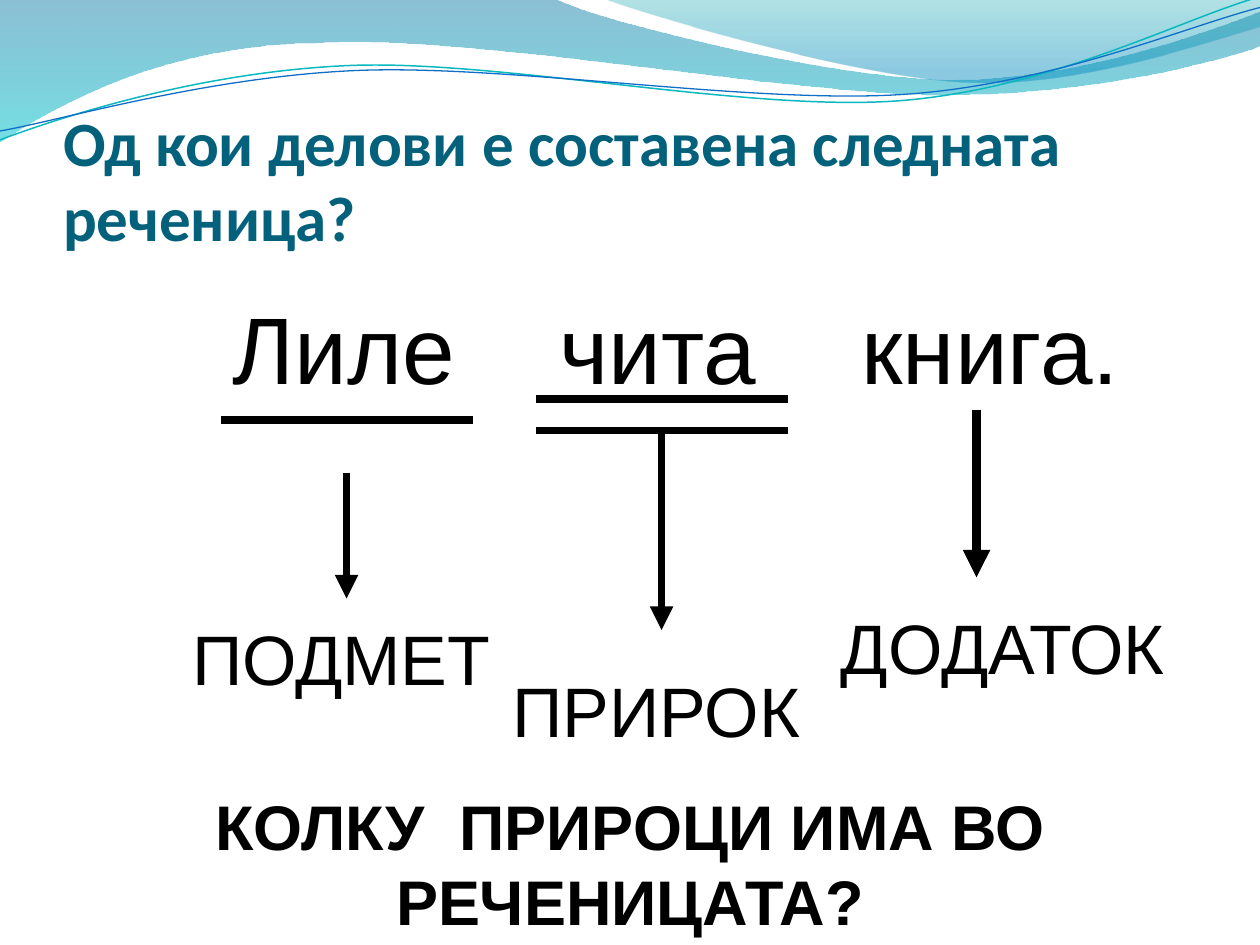
from math import cos, radians, sin

from lxml.etree import SubElement as Sub
from pptx import Presentation
from pptx.dml.color import RGBColor
from pptx.enum.shapes import MSO_CONNECTOR as Conn
from pptx.enum.text import MSO_ANCHOR as Anchor, MSO_AUTO_SIZE as Auto, PP_ALIGN as Align
from pptx.oxml.ns import qn
from pptx.util import Inches, Pt

CELL = Inches(1) // 12
BLACK = "000000"
TILT = 2.7

BANDS = [
    ([(0, -0.01), (4.4, -0.01),
      (4.76, 0.17, 6.64, 0.63, 7.58, 0.63), (8.53, 0.63, 9.58, 0.26, 10, 0.09),
      (10.01, 0.36), (9.83, 0.44, 8.7, 0.76, 7.46, 0.75),
      (6.22, 0.75, 3.82, 0.28, 2.57, 0.34), (1.29, 0.35, 0.46, 0.83, -0.01, 1.13)],
     [(0, "0074A1", 45), (1, "00C6CF", 55)]),
    ([(4.79, -0.01), (5.09, 0.11, 6.82, 0.62, 7.69, 0.65),
      (8.56, 0.69, 9.61, 0.32, 10, 0.21), (10, 0)],
     [(0, "00A1A9", 30), (0.8, "008BBF", 45)]),
]
STRANDS = [
    ([(0, 1.11), (0.48, 0.93, 1.58, 0.57, 2.77, 0.52),
      (3.95, 0.47, 5.93, 0.89, 7.13, 0.8), (8.33, 0.71, 9.38, 0.15, 9.98, -0.02)],
     (4.99, 0.58), "0AB8BF", 0.85),
    ([(0, 1.04), (0.47, 0.96, 1.64, 0.61, 2.83, 0.56),
      (4.03, 0.51, 5.97, 0.83, 7.17, 0.75), (8.36, 0.67, 9.41, 0.21, 10, 0.06)],
     (5, 0.59), "0F6FC6", 0.75),
]
RULES = [(21, 40), (51, 38), (51, 41)]
ARROWS = [(33, 45, 57, 4.5), (63, 41, 60, 4.5), (93, 39, 55, 5.25)]
PARTS = [("ПОДМЕТ", 17, 58, 31), ("ПРИРОК", 47, 63, 31), ("ДОДАТОК", 78, 57, 35)]


def tint(code):
    return RGBColor.from_string(code)


def grid(*units):
    return [round(unit * CELL) for unit in units]


def pairs(move):
    return list(zip(move[::2], move[1::2]))


def turn(move, hub):
    angle, flat = radians(TILT), []
    for x, y in pairs(move):
        dx, dy = x - hub[0], y - hub[1]
        flat += [hub[0] + dx * cos(angle) - dy * sin(angle),
                 hub[1] + dx * sin(angle) + dy * cos(angle)]
    return flat


def add_path(slide, moves, close):
    dots = [(Inches(x), Inches(y)) for move in moves for x, y in pairs(move)]
    pen = slide.shapes.build_freeform(*dots[0])
    pen.add_line_segments(dots[1:], close=close)
    shape = pen.convert_to_shape()
    shape.shadow.inherit = False
    legs = iter(list(shape._element.iter(qn("a:lnTo"))))
    for move in moves[1:]:
        group = [next(legs) for _ in pairs(move)]
        if len(group) == 3:
            group[0].tag = qn("a:cubicBezTo")
            for leg in group[1:]:
                group[0].append(leg[0])
                leg.getparent().remove(leg)
    return shape


def add_band(slide, moves, stops):
    shape = add_path(slide, moves, True)
    shape.line.fill.background()
    shape.fill.gradient()
    shape.fill.gradient_angle = 270
    for stop, (place, code, _) in zip(shape.fill.gradient_stops, stops):
        stop.position = place
        stop.color.rgb = tint(code)
    marks = shape._element.spPr.iter(qn("a:srgbClr"))
    for mark, (_, _, alpha) in zip(marks, stops):
        Sub(mark, qn("a:alpha"), val=str(alpha * 1000))


def add_strand(slide, moves, hub, code, width):
    shape = add_path(slide, [turn(move, hub) for move in moves], False)
    shape.rotation = 360 - TILT
    shape.fill.background()
    shape.line.color.rgb = tint(code)
    shape.line.width = Pt(width)


def add_line(slide, ends, width, head=False):
    line = slide.shapes.add_connector(Conn.STRAIGHT, *grid(*ends))
    line.line.color.rgb = tint(BLACK)
    line.line.width = Pt(width)
    if head:
        Sub(line.line._get_or_add_ln(), qn("a:tailEnd"), type="triangle")
    Sub(line._element.spPr, qn("a:effectLst"))


def style(para, size, code=BLACK, face="Arial", bold=False):
    for run in para.runs:
        font = run.font
        font.name, font.size, font.bold = face, Pt(size), bold
        font.color.rgb = tint(code)


def add_text(slide, texts, box, size, bold=False, align=Align.CENTER, gap=4):
    frame = slide.shapes.add_textbox(*grid(*box)).text_frame
    frame.word_wrap = True
    frame.auto_size = Auto.SHAPE_TO_FIT_TEXT
    para = frame.paragraphs[0]
    for text in texts:
        para.add_run().text = text
    para.alignment = align
    para.space_before = Pt(gap)
    style(para, size, bold=bold)
    return para


def add_tabs(para, stops):
    tabs = Sub(para._p.get_or_add_pPr(), qn("a:tabLst"))
    for stop in stops:
        Sub(tabs, qn("a:tab"), pos=str(Inches(stop)), algn="l")


def set_title(slide, text, box):
    title = slide.shapes.title
    title.left, title.top, title.width, title.height = grid(*box)
    frame = title.text_frame
    frame.text = text
    frame.auto_size = Auto.NONE
    frame.vertical_anchor = Anchor.BOTTOM
    frame.margin_left = frame.margin_right = frame.margin_bottom = 0
    para = frame.paragraphs[0]
    para.alignment = Align.LEFT
    style(para, 36, "04617B", "Calibri", True)
    slide.shapes._spTree.append(title._element)


def main():
    deck = Presentation()
    deck.slide_width, deck.slide_height = grid(120, 90)
    slide = deck.slides.add_slide(deck.slide_layouts[5])
    for band in BANDS:
        add_band(slide, *band)
    for strand in STRANDS:
        add_strand(slide, *strand)
    set_title(slide, "Од кои делови е составена следната реченица?", (6, 9.25, 108, 15))
    words = add_text(slide, ["Лиле\tчита\tкнига."], (21, 27, 90, 12), 54,
                     align=Align.LEFT, gap=0)
    add_tabs(words, (2.59, 4.99))
    for x, y in RULES:
        add_line(slide, (x, y, x + 24, y), 4.5)
    for x, top, end, width in ARROWS:
        add_line(slide, (x, top, x, end), width, True)
    for text, x, y, wide in PARTS:
        add_text(slide, [text], (x, y, wide, 9.25), 40)
    query = add_text(slide, ["КОЛКУ", " ", "ПРИРОЦИ ИМА ВО РЕЧЕНИЦАТА?"],
                     (4, 74.4, 112, 15.6), 36, True)
    query.runs[1].font._element.set("spc", "1000")
    deck.save("out.pptx")


if __name__ == "__main__":
    main()
